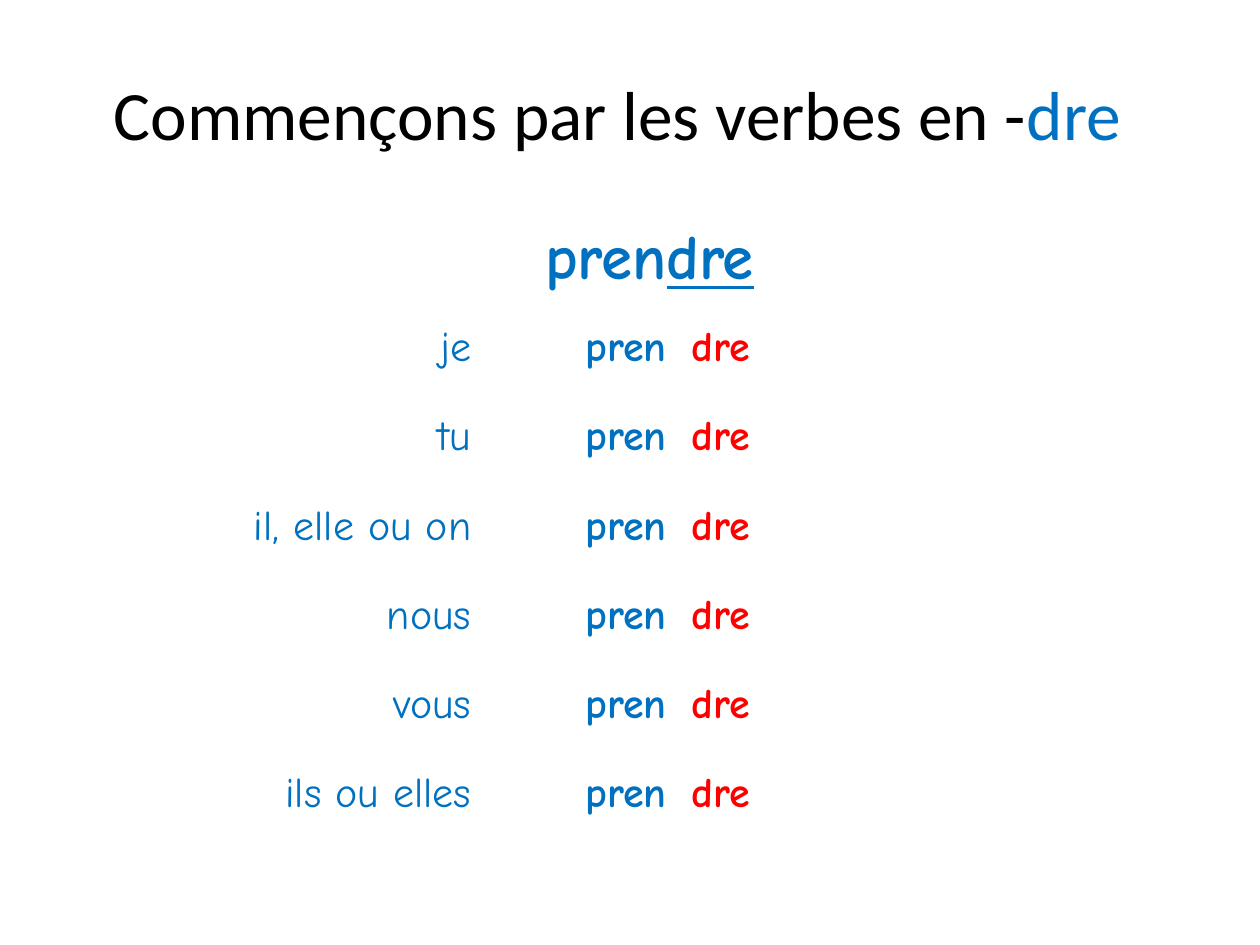
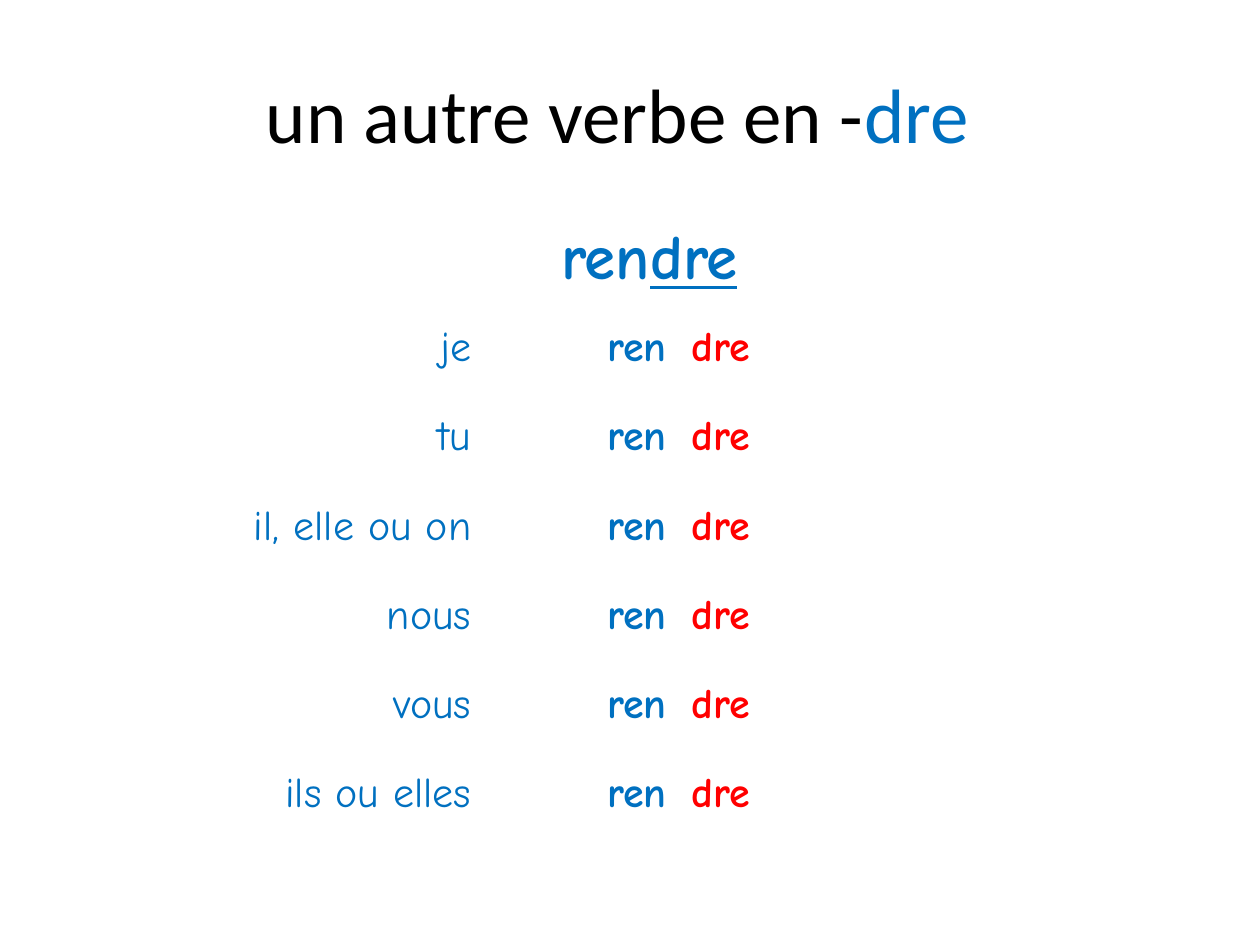
"""Build two slides that conjugate French verbs ending in -dre."""
from typing import NamedTuple

from pptx import Presentation
from pptx import util as u
from pptx.dml.color import RGBColor
from pptx.enum import text

BLUE = RGBColor(0x00, 0x70, 0xC0)
RED = RGBColor(0xFF, 0x00, 0x00)
BLACK = RGBColor(0x00, 0x00, 0x00)
WHITE = RGBColor(0xFF, 0xFF, 0xFF)

TITLE_FONT = "Calibri"
TABLE_FONT = "Comic Neue"
TITLE_LAYOUT = 5
ENDING = "dre"
PRONOUNS = ("je", "tu", "il, elle ou on", "nous", "vous", "ils ou elles")
COLUMN_WIDTHS = (2.62, 1.55, 3.7)

TITLE_BOX = {
    "left": u.Inches(0.4), "top": u.Inches(0.27),
    "width": u.Inches(9), "height": u.Inches(1.25),
}
TABLE_BOX = {
    "left": u.Inches(1.22), "top": u.Inches(1.7),
    "width": u.Inches(sum(COLUMN_WIDTHS)), "height": u.Inches(4.96),
}
TITLE_FORMAT = {"name": TITLE_FONT, "bold": False}
INFINITIVE_FORMAT = {"name": TABLE_FONT, "size": u.Pt(36), "bold": True}
PRONOUN_FORMAT = {"name": TABLE_FONT, "size": u.Pt(24), "bold": False}
VERB_FORMAT = PRONOUN_FORMAT | {"bold": True}


class Run(NamedTuple):
    """A piece of text with its colour and font format."""
    words: str
    color: RGBColor
    format: dict


class VerbSlide(NamedTuple):
    """The title, title size and verb stem of one slide."""
    title: str
    title_size: float
    stem: str


VERB_SLIDES = (
    VerbSlide("Commençons par les verbes en -", 39.6, "pren"),
    VerbSlide("un autre verbe en -", 44, "ren"),
)


def set_attributes(target, values: dict) -> None:
    """Set each named attribute of the target."""
    for name, value in values.items():
        setattr(target, name, value)


def write_runs(frame, alignment, *runs: Run) -> None:
    """Write the runs into the first paragraph of a text frame."""
    paragraph = frame.paragraphs[0]
    paragraph.alignment = alignment
    for item in runs:
        run = paragraph.add_run()
        run.text = item.words
        set_attributes(run.font, item.format)
        run.font.color.rgb = item.color


def add_title(slide, verb: VerbSlide) -> None:
    """Place the title and colour its verb ending."""
    title = slide.shapes.title
    set_attributes(title, TITLE_BOX)
    frame = title.text_frame
    set_attributes(frame, {
        "word_wrap": True,
        "auto_size": text.MSO_AUTO_SIZE.NONE,
        "vertical_anchor": text.MSO_ANCHOR.MIDDLE,
    })
    title_format = TITLE_FORMAT | {"size": u.Pt(verb.title_size)}
    write_runs(frame, text.PP_ALIGN.CENTER,
               Run(verb.title, BLACK, title_format),
               Run(ENDING, BLUE, title_format))


def add_conjugation(slide, stem: str) -> None:
    """Add the table with the infinitive above a row for each pronoun."""
    table = slide.shapes.add_table(
        len(PRONOUNS) + 1, len(COLUMN_WIDTHS), **TABLE_BOX).table
    for column, width in zip(table.columns, COLUMN_WIDTHS):
        column.width = u.Inches(width)
    for cell in table.iter_cells():
        cell.fill.solid()
        cell.fill.fore_color.rgb = WHITE
        cell.vertical_anchor = text.MSO_ANCHOR.MIDDLE

    heading = table.cell(0, 0)
    heading.merge(table.cell(0, len(COLUMN_WIDTHS) - 1))
    write_runs(heading.text_frame, text.PP_ALIGN.CENTER,
               Run(stem, BLUE, INFINITIVE_FORMAT),
               Run(ENDING, BLUE, INFINITIVE_FORMAT | {"underline": True}))

    for row, pronoun in enumerate(PRONOUNS, start=1):
        entries = (
            (text.PP_ALIGN.RIGHT, Run(pronoun, BLUE, PRONOUN_FORMAT)),
            (text.PP_ALIGN.RIGHT, Run(stem, BLUE, VERB_FORMAT)),
            (text.PP_ALIGN.LEFT, Run(ENDING, RED, VERB_FORMAT)),
        )
        for column, (alignment, run) in enumerate(entries):
            write_runs(table.cell(row, column).text_frame, alignment, run)


def main() -> None:
    """Build and save the presentation."""
    presentation = Presentation()
    set_attributes(presentation, {
        "slide_width": u.Inches(10), "slide_height": u.Inches(7.5)})
    for verb in VERB_SLIDES:
        slide = presentation.slides.add_slide(
            presentation.slide_layouts[TITLE_LAYOUT])
        add_title(slide, verb)
        add_conjugation(slide, verb.stem)
    presentation.save("out.pptx")


if __name__ == "__main__":
    main()
